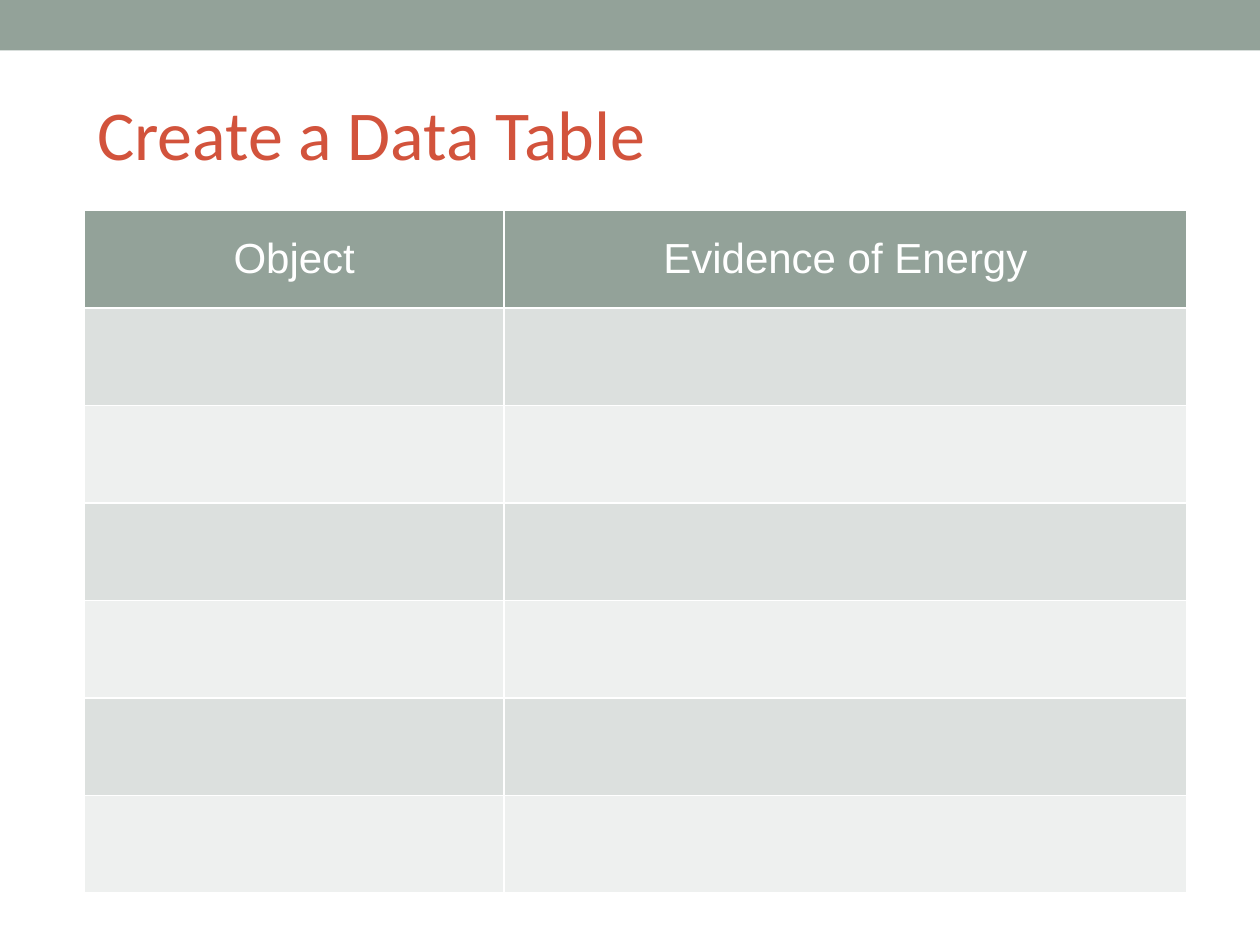
from dataclasses import dataclass

import pptx
import pptx.dml.color
import pptx.enum.shapes
import pptx.enum.text
import pptx.oxml
import pptx.oxml.ns
import pptx.util

Inches = pptx.util.Inches
Pt = pptx.util.Pt
RGBColor = pptx.dml.color.RGBColor
Anchor = pptx.enum.text.MSO_ANCHOR
Align = pptx.enum.text.PP_ALIGN

SAGE = RGBColor(0x93, 0xA2, 0x99)
DARK_BAND = RGBColor(0xDC, 0xE0, 0xDE)
LIGHT_BAND = RGBColor(0xEE, 0xF0, 0xEF)
RUST = RGBColor(0xD2, 0x53, 0x3C)
WHITE = RGBColor(0xFF, 0xFF, 0xFF)

LEFT = Inches(0.67)
CONTENT_WIDTH = Inches(8.75)
ROW_HEIGHT = Inches(0.774)
ROW_COUNT = 7


@dataclass
class Column:
    heading: str
    width: float


COLUMNS = [Column("Object", 3.33), Column("Evidence of Energy", 5.42)]


def add_borders(cell, color: RGBColor, width: int) -> None:
    properties = cell._tc.get_or_add_tcPr()
    for side in ("lnL", "lnR", "lnT", "lnB"):
        properties.append(pptx.oxml.parse_xml(
            f'<a:{side} {pptx.oxml.ns.nsdecls("a")} w="{width}"><a:solidFill>'
            f'<a:srgbClr val="{color}"/></a:solidFill></a:{side}>'))


def style_cell(cell, fill: RGBColor) -> None:
    add_borders(cell, WHITE, Pt(1))
    cell.fill.solid()
    cell.fill.fore_color.rgb = fill


def add_top_bar(page) -> None:
    bar = page.shapes.add_shape(
        pptx.enum.shapes.MSO_SHAPE.RECTANGLE, 0, 0, Inches(10), Inches(0.4))
    bar.shadow.inherit = False
    bar.fill.solid()
    bar.fill.fore_color.rgb = SAGE
    bar.line.fill.background()


def format_title(title, text: str) -> None:
    title.left, title.top = LEFT, Inches(0.67)
    title.width, title.height = CONTENT_WIDTH, Inches(0.77)
    frame = title.text_frame
    frame.text = text
    frame.word_wrap = True
    frame.auto_size = pptx.enum.text.MSO_AUTO_SIZE.NONE
    frame.vertical_anchor = Anchor.TOP
    paragraph = frame.paragraphs[0]
    paragraph.alignment = Align.LEFT
    paragraph.font.name = "Calibri"
    paragraph.font.size = Pt(40)
    paragraph.font.color.rgb = RUST


def add_data_table(page, columns: list[Column]) -> None:
    table = page.shapes.add_table(
        ROW_COUNT, len(columns), LEFT, Inches(1.67),
        CONTENT_WIDTH, ROW_HEIGHT * ROW_COUNT).table
    for row in table.rows:
        row.height = ROW_HEIGHT
    for index, column in enumerate(columns):
        table.columns[index].width = Inches(column.width)
        heading = table.cell(0, index)
        style_cell(heading, SAGE)
        heading.text = column.heading
        heading.vertical_anchor = Anchor.MIDDLE
        paragraph = heading.text_frame.paragraphs[0]
        paragraph.alignment = Align.CENTER
        paragraph.font.name = "Arial"
        paragraph.font.size = Pt(24)
        paragraph.font.bold = False
        paragraph.font.color.rgb = WHITE
        for row in range(1, ROW_COUNT):
            style_cell(table.cell(row, index), DARK_BAND if row % 2 else LIGHT_BAND)


def main() -> None:
    deck = pptx.Presentation()
    deck.slide_width, deck.slide_height = Inches(10), Inches(7.5)
    page = deck.slides.add_slide(deck.slide_layouts[5])
    add_top_bar(page)
    format_title(page.shapes.title, "Create a Data Table")
    add_data_table(page, COLUMNS)
    deck.save("out.pptx")


if __name__ == "__main__":
    main()
